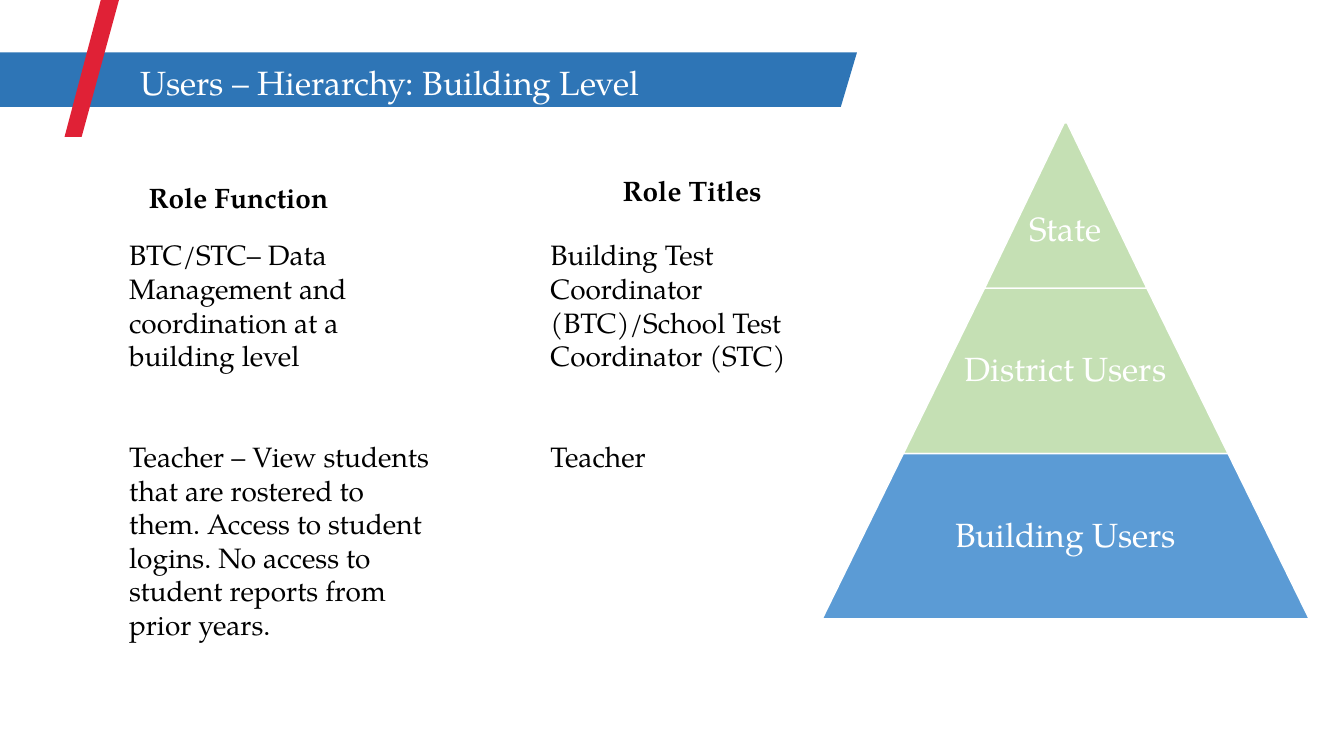
from pptx import Presentation
from pptx.dml.color import RGBColor
from pptx.enum import shapes, text
from pptx.oxml import xmlchemy
from pptx.oxml.ns import qn
from pptx.util import Inches, Pt
from lxml import etree

FONT = "TeX Gyre Pagella"
COLORS = {
    "banner": "2E75B6", "slash": "E02136", "other tier": "C5E0B4",
    "current tier": "5B9BD5", "white": "FFFFFF", "black": "000000",
}


def color(name):
    return RGBColor.from_string(COLORS[name])


def write(frame, lines, size, ink, align, bold=False, gap=0):
    frame.text = "\n".join(lines)
    frame.auto_size = text.MSO_AUTO_SIZE.NONE
    for number, paragraph in enumerate(frame.paragraphs):
        properties = paragraph._p.get_or_add_pPr()
        properties.set("marL", "0")
        properties.set("indent", "0")
        etree.SubElement(properties, qn("a:buNone"))
        paragraph.alignment = align
        paragraph.space_before = Pt(gap if number else 0)
        paragraph.font.name = FONT
        paragraph.font.size = Pt(size)
        paragraph.font.bold = bold
        paragraph.font.color.rgb = color(ink)


prs = Presentation()
prs.slide_width, prs.slide_height = Inches(13.33), Inches(7.5)
slide = prs.slides.add_slide(prs.slide_layouts[4])

decorations = [
    ("banner", [(0, 0.52), (8.5, 0.52), (8.34, 1.06), (0, 1.06)]),
    ("slash", [(0.64, 1.36), (1, 0), (1.18, 0), (0.81, 1.36)]),
]
for name, corners in decorations:
    points = [(Inches(x), Inches(y)) for x, y in corners]
    outline = slide.shapes.build_freeform(*points[0])
    outline.add_line_segments(points[1:])
    stripe = outline.convert_to_shape()
    stripe.shadow.inherit = False
    stripe.fill.solid()
    stripe.fill.fore_color.rgb = color(name)
    stripe.line.fill.background()

title = slide.shapes.title
title.left, title.top, title.width, title.height = map(Inches, (1.29, 0.56, 5.94, 0.5))
write(title.text_frame, ["Users – Hierarchy: Building Level"], 24, "white", text.PP_ALIGN.LEFT)
title.text_frame.vertical_anchor = text.MSO_ANCHOR.TOP
slide.shapes.element.append(title.element)

columns = [
    (1, (0.95, 1.74, 2.83, 0.44), ["Role Function"]),
    (2, (1.18, 2.31, 3.26, 4.14), [
        "BTC/STC– Data Management and coordination at a building level",
        "Teacher – View students that are rostered to them. Access to student logins. "
        "No access to student reports from prior years.",
    ]),
    (3, (5.76, 1.67, 2.21, 0.44), ["Role Titles"]),
    (4, (5.36, 2.31, 3.01, 2.46), [
        "Building Test Coordinator (BTC)/School Test Coordinator (STC)",
        "Teacher",
    ]),
]
for index, box, lines in columns:
    column = slide.placeholders[index]
    column.left, column.top, column.width, column.height = map(Inches, box)
    is_heading = len(lines) == 1
    align = text.PP_ALIGN.CENTER if is_heading else text.PP_ALIGN.LEFT
    write(column.text_frame, lines, 20, "black", align, bold=is_heading, gap=48)
    column.text_frame.vertical_anchor = text.MSO_ANCHOR.TOP

APEX, PYRAMID_TOP, TIER_HEIGHT, TIER_STEP = 10.57, 1.22, 1.64, 1.61
tiers = [("State", "other tier"), ("District Users", "other tier"),
         ("Building Users", "current tier")]
for level, (label, fill) in enumerate(tiers):
    width = TIER_STEP * (level + 1)
    tier = slide.shapes.add_shape(
        shapes.MSO_SHAPE.TRAPEZOID, Inches(APEX - width / 2),
        Inches(PYRAMID_TOP + TIER_HEIGHT * level), Inches(width), Inches(TIER_HEIGHT))
    tier.adjustments[0] = TIER_STEP / 2 / TIER_HEIGHT
    tier.shadow.inherit = False
    tier.fill.solid()
    tier.fill.fore_color.rgb = color(fill)
    tier.line.color.rgb = color("white")
    tier.line.width = Pt(1)
    frame = tier.text_frame
    write(frame, [label], 24, "white", text.PP_ALIGN.CENTER)
    frame.word_wrap = False
    frame.vertical_anchor = text.MSO_ANCHOR.MIDDLE
    frame.margin_left = frame.margin_right = frame.margin_top = 0
    frame.margin_bottom = Inches(TIER_HEIGHT / 3 / (level + 1) if level else 0.04)
    frame.paragraphs[0].line_spacing = 0.9

prs.save("out.pptx")
